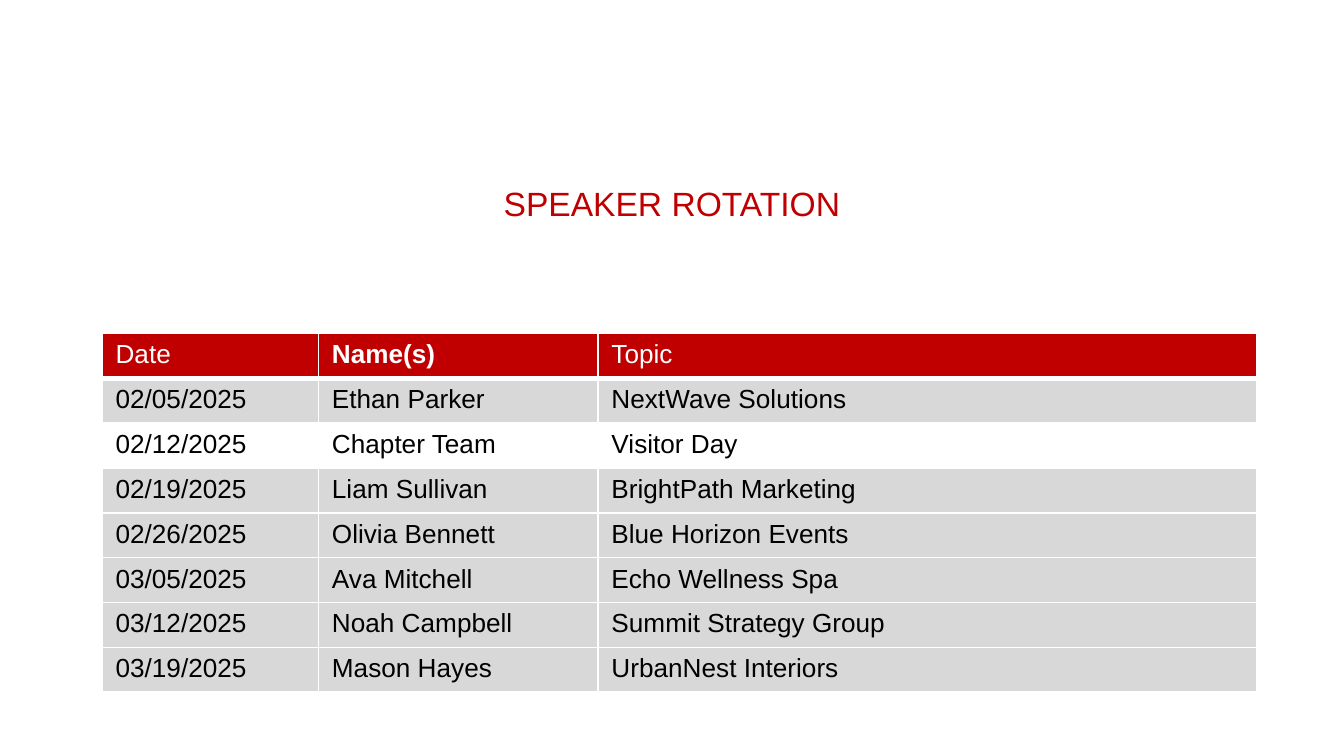
from typing import NamedTuple

from lxml.etree import SubElement
from pptx import Presentation
from pptx.dml.color import RGBColor
from pptx.enum.text import PP_ALIGN as Align
from pptx.oxml.ns import qn
from pptx.util import Inches, Pt

RED = RGBColor(0xC0, 0x00, 0x00)
GREY = RGBColor(0xD8, 0xD8, 0xD8)
WHITE = RGBColor(0xFF, 0xFF, 0xFF)
BLACK = RGBColor(0x00, 0x00, 0x00)

SLIDE_WIDTH = Inches(10)
SLIDE_HEIGHT = SLIDE_WIDTH * 9 // 16
TABLE_LEFT, TABLE_TOP = Inches(0.76), Inches(2.48)
ROW_HEIGHT = Inches(0.33)
COLUMN_WIDTHS = [Inches(1.61), Inches(2.08), Inches(4.9)]
HEADINGS = ("Date", "Name(s)", "Topic")


class Talk(NamedTuple):
    """One speaker's turn in the rotation."""

    date: str
    speaker: str
    topic: str
    band: RGBColor = GREY


TALKS = [
    Talk("02/05/2025", "Ethan Parker", "NextWave Solutions"),
    Talk("02/12/2025", "Chapter Team", "Visitor Day", WHITE),
    Talk("02/19/2025", "Liam Sullivan", "BrightPath Marketing"),
    Talk("02/26/2025", "Olivia Bennett", "Blue Horizon Events"),
    Talk("03/05/2025", "Ava Mitchell", "Echo Wellness Spa"),
    Talk("03/12/2025", "Noah Campbell", "Summit Strategy Group"),
    Talk("03/19/2025", "Mason Hayes", "UrbanNest Interiors"),
]


def add_run(paragraph, wording: str, size: int, color: RGBColor, bold: bool = False) -> None:
    """Add one formatted run to a paragraph."""
    run = paragraph.add_run()
    run.text = wording
    run.font.name = "Arial"
    run.font.size = Pt(size)
    run.font.bold = bold
    run.font.color.rgb = color


def add_borders(cell, top: float, bottom: float) -> None:
    """Draw white borders of the given point widths around a cell."""
    properties = cell._tc.get_or_add_tcPr()
    for side, width in (("L", 1), ("R", 1), ("T", top), ("B", bottom)):
        line = SubElement(properties, qn(f"a:ln{side}"), w=str(Pt(width)))
        fill = SubElement(line, qn("a:solidFill"))
        SubElement(fill, qn("a:srgbClr"), val=str(WHITE))


def fill_cell(cell, wording: str, band: RGBColor, color: RGBColor,
              bold: bool = False, top: float = 1, bottom: float = 1) -> None:
    """Write, border and colour one table cell."""
    add_borders(cell, top, bottom)
    cell.fill.solid()
    cell.fill.fore_color.rgb = band
    add_run(cell.text_frame.paragraphs[0], wording, 14, color, bold)


def add_title(slide) -> None:
    """Add the centred heading across the full slide width."""
    heading = slide.shapes.add_textbox(0, Inches(1.32), SLIDE_WIDTH, Inches(0.47))
    frame = heading.text_frame
    frame.word_wrap = True
    frame.margin_left = frame.margin_right = Inches(0.07)
    frame.margin_top = frame.margin_bottom = Inches(0.04)
    frame.paragraphs[0].alignment = Align.CENTER
    add_run(frame.paragraphs[0], "SPEAKER ROTATION", 18, RED)


def add_schedule(slide) -> None:
    """Add the table of dates, speakers and topics."""
    row_count = len(TALKS) + 1
    schedule = slide.shapes.add_table(
        row_count, len(HEADINGS), TABLE_LEFT, TABLE_TOP,
        sum(COLUMN_WIDTHS), row_count * ROW_HEIGHT).table
    for column, width in zip(schedule.columns, COLUMN_WIDTHS):
        column.width = width
    for row in schedule.rows:
        row.height = ROW_HEIGHT
    for column, heading in enumerate(HEADINGS):
        fill_cell(schedule.cell(0, column), heading, RED, WHITE,
                  bold=heading == "Name(s)", bottom=3)
    for row, talk in enumerate(TALKS, start=1):
        for column, wording in enumerate((talk.date, talk.speaker, talk.topic)):
            fill_cell(schedule.cell(row, column), wording, talk.band, BLACK,
                      top=3 if row == 1 else 1)


def main() -> None:
    """Build and save the speaker rotation slide."""
    deck = Presentation()
    deck.slide_width, deck.slide_height = SLIDE_WIDTH, SLIDE_HEIGHT
    slide = deck.slides.add_slide(deck.slide_layouts[6])
    add_title(slide)
    add_schedule(slide)
    deck.save("out.pptx")


if __name__ == "__main__":
    main()
